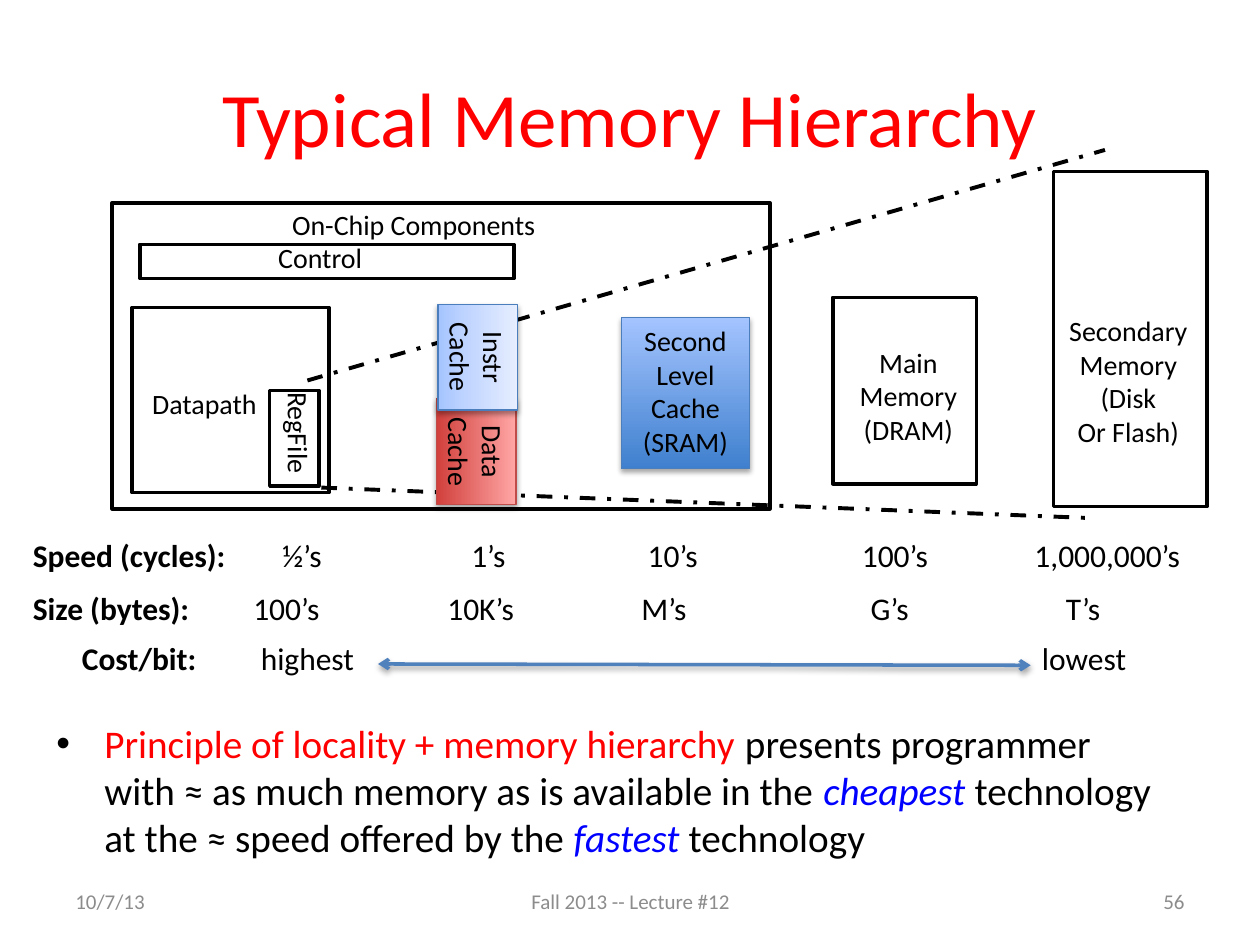
from dataclasses import dataclass
from lxml.etree import SubElement
from pptx import Presentation
from pptx.dml.color import RGBColor
from pptx.enum.dml import MSO_LINE
from pptx.enum.shapes import MSO_CONNECTOR as Connector, MSO_SHAPE as Shape
from pptx.enum.text import MSO_ANCHOR as Anchor, PP_ALIGN as Align
from pptx.oxml.ns import qn
from pptx.util import Emu, Pt

FONT = "Calibri"
BLACK, RED, BLUE, GREY = "000000", "FF0000", "0000FF", "8C8C8C"
COLUMNS, ROWS = 10, 7.5
LEFT, CENTER, RIGHT = Align.LEFT, Align.CENTER, Align.RIGHT

deck = Presentation()
deck.slide_width, deck.slide_height = Emu(9144000), Emu(6858000)
page = deck.slides.add_slide(deck.slide_layouts[6])


@dataclass
class Area:
    """A place on the grid, in columns and rows."""
    left: float
    top: float
    width: float
    height: float


@dataclass
class Label:
    area: Area
    text: str
    align: Align = LEFT
    size: float = 16
    color: str = BLACK
    anchor: Anchor = Anchor.TOP
    rotation: float = 0
    wrap: bool = False


@dataclass
class Cache:
    area: Area
    text: str
    stops: list
    edge: str
    rotation: float = 0


@dataclass
class Measure:
    """A heading followed by values, each at its own column."""
    left: float
    top: float
    heading: str
    values: list


def col(count: float) -> Emu:
    return Emu(round(deck.slide_width * count / COLUMNS))


def row(count: float) -> Emu:
    return Emu(round(deck.slide_height * count / ROWS))


def place(area: Area) -> tuple:
    return col(area.left), row(area.top), col(area.width), row(area.height)


def rgb(value: str) -> RGBColor:
    return RGBColor.from_string(value)


def style(span, size: float, color: str = BLACK, bold=False, italic=False) -> None:
    font = span.font
    font.name, font.size, font.bold, font.italic = FONT, Pt(size), bold, italic
    font.color.rgb = rgb(color)


def write(box, text: str, align: Align, size: float, color: str) -> None:
    box.text_frame.text = text
    for para in box.text_frame.paragraphs:
        para.alignment = align
        for span in para.runs:
            style(span, size, color)


def add_shadow(shape) -> None:
    props = shape._element.spPr
    for old in props.findall(qn("a:effectLst")):
        props.remove(old)
    effects = SubElement(props, qn("a:effectLst"))
    shadow = SubElement(effects, qn("a:outerShdw"), blurRad=str(Pt(3.1)),
                        dist=str(Pt(1.8)), dir="5400000", rotWithShape="0")
    tint = SubElement(shadow, qn("a:srgbClr"), val=BLACK)
    SubElement(tint, qn("a:alpha"), val="35000")


def draw_label(label: Label) -> None:
    box = page.shapes.add_textbox(*place(label.area))
    box.rotation = label.rotation
    box.text_frame.word_wrap = label.wrap
    box.text_frame.vertical_anchor = label.anchor
    write(box, label.text, label.align, label.size, label.color)


def draw_frame(area: Area) -> None:
    box = page.shapes.add_shape(Shape.RECTANGLE, *place(area))
    box.shadow.inherit = False
    box.fill.background()
    box.line.color.rgb, box.line.width = rgb(BLACK), Pt(2)


def draw_cache(cache: Cache) -> None:
    box = page.shapes.add_shape(Shape.RECTANGLE, *place(cache.area))
    box.rotation = cache.rotation
    box.fill.gradient()
    box.fill.gradient_angle = 90
    stop_list = next(box._element.spPr.iter(qn("a:gsLst")))
    for old in list(stop_list):
        stop_list.remove(old)
    for share, color in cache.stops:
        stop = SubElement(stop_list, qn("a:gs"), pos=str(share * 1000))
        SubElement(stop, qn("a:srgbClr"), val=color)
    box.line.color.rgb, box.line.width = rgb(cache.edge), Pt(0.75)
    add_shadow(box)
    box.text_frame.word_wrap = False
    box.text_frame.vertical_anchor = Anchor.TOP
    write(box, cache.text, CENTER, 16, BLACK)


def draw_line(start: tuple, end: tuple, color: str, width: float):
    line = page.shapes.add_connector(
        Connector.STRAIGHT, col(start[0]), row(start[1]), col(end[0]), row(end[1]))
    line.line.color.rgb, line.line.width = rgb(color), Pt(width)
    SubElement(line._element.spPr, qn("a:effectLst"))
    return line


def draw_measure(measure: Measure) -> None:
    inset = 0.07
    area = Area(measure.left - inset, measure.top, 9.65 - measure.left, 0.32)
    frame = page.shapes.add_textbox(*place(area)).text_frame
    frame.word_wrap = True
    frame.margin_left = frame.margin_right = col(inset)
    frame.margin_top = frame.margin_bottom = row(0.03)
    para = frame.paragraphs[0]
    para.line_spacing = 0.85
    tabs = SubElement(para._p.get_or_add_pPr(), qn("a:tabLst"))
    for position, _ in measure.values:
        SubElement(tabs, qn("a:tab"), pos=str(col(position - measure.left)), algn="l")
    for index, text in enumerate([measure.heading] + [text for _, text in measure.values]):
        span = para.add_run()
        span.text = text if index == 0 else "\t" + text
        style(span, 18, bold=index == 0)


# Title
draw_label(Label(Area(0.5, 0.3, 9, 1.25), "Typical Memory Hierarchy", CENTER, 44, RED,
                 Anchor.MIDDLE, wrap=True))

# Outlined parts: chip, control, datapath, register file, main and secondary memory
for area in (Area(0.89, 1.61, 5.22, 2.43), Area(1.11, 1.94, 2.97, 0.27),
             Area(1.05, 2.44, 1.56, 1.47), Area(2.14, 3.1, 0.39, 0.76),
             Area(6.61, 2.36, 1.14, 1.48), Area(8.36, 1.36, 1.22, 2.66)):
    draw_frame(area)

for label in (
    Label(Area(2.22, 1.6, 2.35, 0.36), "On-Chip Components"),
    Label(Area(2.11, 1.86, 0.91, 0.36), "Control"),
    Label(Area(1.11, 3.02, 1.1, 0.36), "Datapath"),
    Label(Area(1.82, 3.39, 1.11, 0.36), "RegFile", rotation=90, wrap=True),
    Label(Area(6.71, 2.69, 1, 0.9), "Main\nMemory\n(DRAM)", CENTER),
    Label(Area(8.38, 2.44, 1.15, 1.18), "Secondary\nMemory\n(Disk\nOr Flash)", CENTER,
          wrap=True),
):
    draw_label(label)

# Widening lines from the register file to secondary memory
for start, end in (((2.44, 3.02), (8.77, 1.19)), ((2.55, 3.87), (8.61, 4.11))):
    draw_line(start, end, BLACK, 2.25).line.dash_style = MSO_LINE.DASH_DOT

# Caches
for cache in (
    Cache(Area(4.93, 2.52, 1.02, 1.2), "Second\nLevel\nCache\n(SRAM)",
          [(0, "3F80CE"), (100, "A4C4FF")], "4B7EBC"),
    Cache(Area(3.36, 3.27, 0.84, 0.63), "Data\nCache",
          [(0, "D1403C"), (100, "FFA6A5")], "BF4C48", 90),
    Cache(Area(3.37, 2.52, 0.84, 0.63), "Instr\nCache",
          [(0, "A4C4FF"), (35, "BFD4FF"), (100, "E6EEFF")], "4B7EBC", 90),
):
    draw_cache(cache)

# Speed, size and cost of each level
for measure in (
    Measure(0.26, 4.27, "Speed (cycles):", [(2.24, "½’s"), (3.74, "1’s"), (5.14, "10’s"),
                                            (6.84, "100’s"), (8.21, "1,000,000’s")]),
    Measure(0.26, 4.69, "Size (bytes):", [(2.01, "100’s"), (3.55, "10K’s"), (5.09, "M’s"),
                                          (6.91, "G’s"), (8.46, "T’s")]),
    Measure(0.65, 5.09, "Cost/bit:", [(2.07, "highest"), (8.27, "lowest")]),
):
    draw_measure(measure)

cost_arrow = draw_line((3, 5.27), (8.18, 5.28), "4F81BD", 2)
for tip in ("a:headEnd", "a:tailEnd"):
    SubElement(cost_arrow.line._get_or_add_ln(), qn(tip), type="arrow")
add_shadow(cost_arrow)

# Principle
principle = page.shapes.add_textbox(*place(Area(0.35, 5.66, 9, 1.31))).text_frame
principle.word_wrap = True
para = principle.paragraphs[0]
para.space_before = Pt(4.5)
props = para._p.get_or_add_pPr()
props.set("marL", str(col(0.38)))
props.set("indent", str(-col(0.38)))
SubElement(SubElement(props, qn("a:buClr")), qn("a:srgbClr"), val=BLACK)
SubElement(props, qn("a:buFont"), typeface="Arial")
SubElement(props, qn("a:buChar"), char="•")
for text, color in (
    ("Principle of locality + memory hierarchy ", RED),
    ("presents programmer with ≈ as much memory as is available in the ", BLACK),
    ("cheapest ", BLUE), ("technology at the ≈ speed offered by the ", BLACK),
    ("fastest ", BLUE), ("technology", BLACK),
):
    span = para.add_run()
    span.text = text
    style(span, 22.4, color, italic=color == BLUE)

# Footer
for left, width, text, align in ((0.5, 2.33, "10/7/13", LEFT),
                                 (3.42, 3.17, "Fall 2013 -- Lecture #12", CENTER),
                                 (7.17, 2.33, "56", RIGHT)):
    draw_label(Label(Area(left, 6.95, width, 0.4), text, align, 12, GREY,
                     Anchor.MIDDLE, wrap=True))

deck.save("out.pptx")
